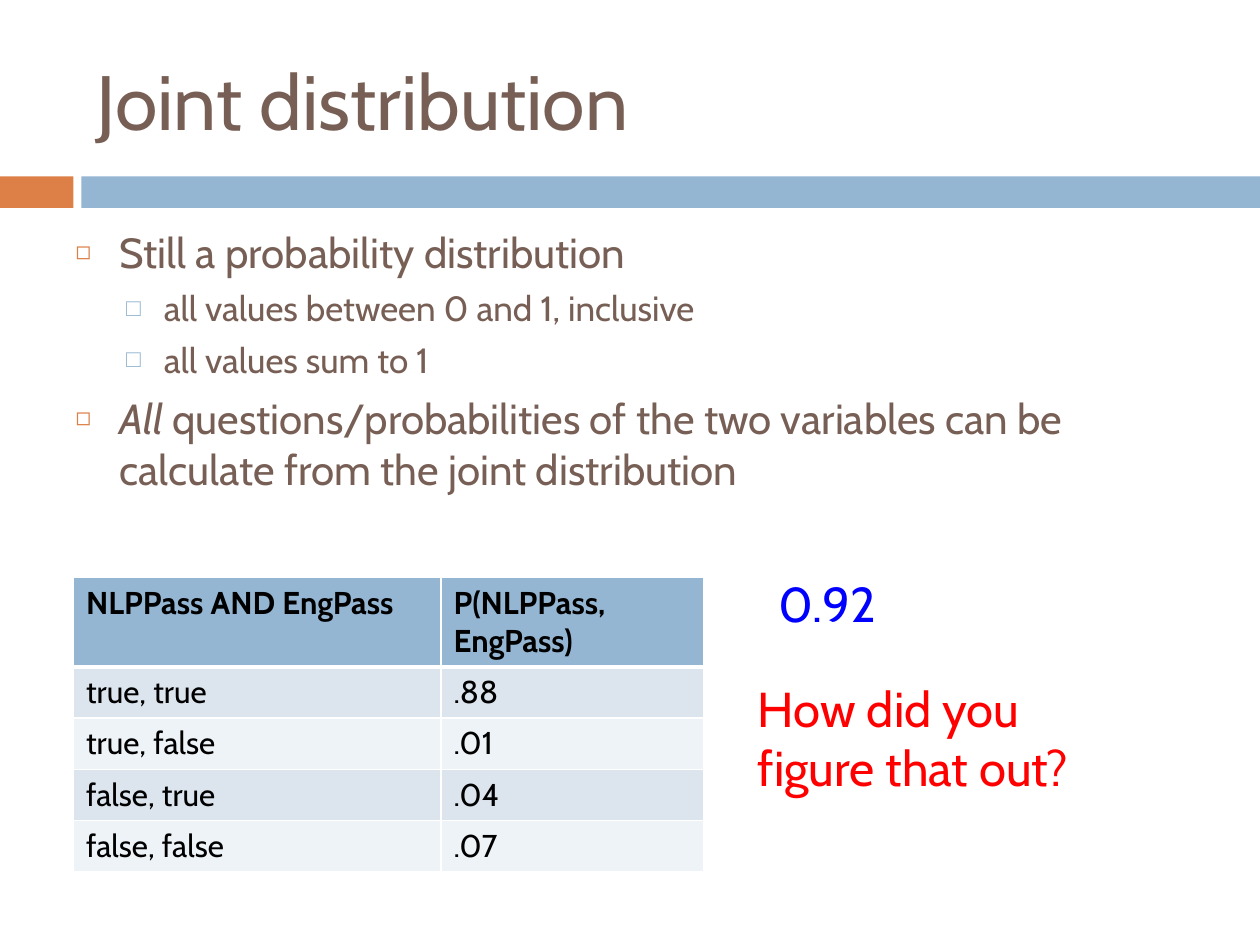
"""Build the joint distribution slide."""
from dataclasses import dataclass
from typing import Any, NamedTuple

import pptx
import pptx.dml.color
import pptx.enum.shapes
import pptx.enum.text
import pptx.oxml
import pptx.oxml.ns
import pptx.util

Pt = pptx.util.Pt


@dataclass(frozen=True)
class Theme:
    """Colours and type sizes of the slide."""
    font: str = "Cabin"
    brown: str = "775F55"
    orange: str = "DD8047"
    blue: str = "94B6D2"
    band_dark: str = "DCE5EE"
    band_light: str = "EEF3F7"
    white: str = "FFFFFF"
    black: str = "000000"
    answer: str = "0000FF"
    question: str = "FF0000"
    title_size: float = 44
    note_size: float = 28
    cell_size: float = 18


class Box(NamedTuple):
    """Left, top, width and height in points."""
    left: float
    top: float
    width: float
    height: float


class Bullet(NamedTuple):
    """Format of one list level."""
    char: str
    color: str
    percent: int
    margin: float
    indent: float
    before: float
    size: float


class Bar(NamedTuple):
    """A filled band under the title."""
    box: Box
    color: str


class Note(NamedTuple):
    """A free line of coloured text."""
    box: Box
    text: str
    color: str


THEME = Theme()
BULLETS = (
    Bullet("◻", THEME.orange, 60, 25.2, -25.2, 7, 24),
    Bullet("□", THEME.blue, 70, 50.4, -21.6, 5.5, 20),
)
BARS = (
    Bar(Box(0, 100.8, 42, 18), THEME.orange),
    Bar(Box(46.5, 100.8, 673.5, 18), THEME.blue),
)
ITEMS = (
    (0, (("Still a probability distribution", False),)),
    (1, (("all values between 0 and 1, inclusive", False),)),
    (1, (("all values sum to 1", False),)),
    (0, (("All", True),
         (" questions/probabilities of the two variables can be calculate "
          "from the joint distribution", False))),
)
ROWS = (
    ("NLPPass AND EngPass", "P(NLPPass, EngPass)"),
    ("true, true", ".88"),
    ("true, false", ".01"),
    ("false, true", ".04"),
    ("false, false", ".07"),
)
COLUMN_WIDTHS = (210, 150)
HEADER_HEIGHT, ROW_HEIGHT = 50.4, 29.2
NOTES = (
    Note(Box(426, 384, 228, 75), "How did you figure that out?", THEME.question),
    Note(Box(438, 324, 72, 41), "0.92", THEME.answer),
)


def rgb(color: str) -> pptx.dml.color.RGBColor:
    """Return a colour object for a hex string."""
    return pptx.dml.color.RGBColor.from_string(color)


def add_text(p: Any, text: str, *, size: float, color: str,
             bold: bool = False, italic: bool = False) -> None:
    """Add one formatted run to a paragraph."""
    r = p.add_run()
    r.text = text
    r.font.name, r.font.size = THEME.font, Pt(size)
    r.font.bold, r.font.italic = bold, italic
    r.font.color.rgb = rgb(color)


def place(sp: Any, box: Box) -> None:
    """Move and size a shape."""
    sp.left, sp.top, sp.width, sp.height = (Pt(v) for v in box)


def add_xml(parent: Any, xml: str) -> None:
    """Append a DrawingML element written without its namespace."""
    head, rest = xml.split(" ", 1)
    ns = pptx.oxml.ns.nsdecls("a")
    parent.append(pptx.oxml.parse_xml(f"{head} {ns} {rest}"))


def add_bar(s: Any, bar: Bar) -> None:
    """Draw a plain filled band."""
    sp = s.shapes.add_shape(pptx.enum.shapes.MSO_SHAPE.RECTANGLE,
                            *(Pt(v) for v in bar.box))
    sp.shadow.inherit = False
    sp.fill.solid()
    sp.fill.fore_color.rgb = rgb(bar.color)
    sp.line.fill.background()


def fill_title(sp: Any) -> None:
    """Write the title."""
    place(sp, Box(48, 18, 642, 78))
    tf = sp.text_frame
    tf.auto_size = pptx.enum.text.MSO_AUTO_SIZE.NONE
    tf.vertical_anchor = pptx.enum.text.MSO_ANCHOR.MIDDLE
    p = tf.paragraphs[0]
    p.alignment = pptx.enum.text.PP_ALIGN.LEFT
    add_text(p, "Joint distribution", size=THEME.title_size, color=THEME.brown)


def fill_body(sp: Any) -> None:
    """Write the bulleted list."""
    place(sp, Box(36, 126, 648, 168))
    tf = sp.text_frame
    tf.auto_size = pptx.enum.text.MSO_AUTO_SIZE.NONE
    for i, (level, runs) in enumerate(ITEMS):
        p = tf.add_paragraph() if i else tf.paragraphs[0]
        b = BULLETS[level]
        p.level, p.space_before = level, Pt(b.before)
        pPr = p._p.get_or_add_pPr()
        pPr.set("marL", str(Pt(b.margin)))
        pPr.set("indent", str(Pt(b.indent)))
        add_xml(pPr, f'<a:buClr ><a:srgbClr val="{b.color}"/></a:buClr>')
        add_xml(pPr, f'<a:buSzPct val="{b.percent * 1000}"/>')
        add_xml(pPr, f'<a:buChar char="{b.char}"/>')
        for text, italic in runs:
            add_text(p, text, size=b.size, color=THEME.brown, italic=italic)


def format_cell(cell: Any, text: str, row: int) -> None:
    """Write, border and fill one table cell."""
    header = row == 0
    widths = {"L": 1, "R": 1, "T": 3 if row == 1 else 1, "B": 3 if header else 1}
    for side, width in widths.items():
        add_xml(cell._tc.get_or_add_tcPr(),
                f'<a:ln{side} w="{Pt(width)}"><a:solidFill>'
                f'<a:srgbClr val="{THEME.white}"/></a:solidFill></a:ln{side}>')
    band = THEME.band_dark if row % 2 else THEME.band_light
    cell.fill.solid()
    cell.fill.fore_color.rgb = rgb(THEME.blue if header else band)
    add_text(cell.text_frame.paragraphs[0], text, size=THEME.cell_size,
             color=THEME.black, bold=header)


def add_table(s: Any) -> None:
    """Draw the probability table."""
    heights = [HEADER_HEIGHT] + [ROW_HEIGHT] * (len(ROWS) - 1)
    box = Box(42, 330, sum(COLUMN_WIDTHS), sum(heights))
    table = s.shapes.add_table(len(ROWS), len(COLUMN_WIDTHS),
                               *(Pt(v) for v in box)).table
    for column, width in zip(table.columns, COLUMN_WIDTHS):
        column.width = Pt(width)
    for i, (height, texts) in enumerate(zip(heights, ROWS)):
        table.rows[i].height = Pt(height)
        for j, text in enumerate(texts):
            format_cell(table.cell(i, j), text, i)


def add_note(s: Any, note: Note) -> None:
    """Draw a wrapped text box."""
    tf = s.shapes.add_textbox(*(Pt(v) for v in note.box)).text_frame
    tf.word_wrap = True
    tf.auto_size = pptx.enum.text.MSO_AUTO_SIZE.SHAPE_TO_FIT_TEXT
    add_text(tf.paragraphs[0], note.text, size=THEME.note_size, color=note.color)


def main() -> None:
    """Build and save the slide."""
    prs = pptx.Presentation()
    prs.slide_width, prs.slide_height = Pt(720), Pt(540)
    s = prs.slides.add_slide(prs.slide_layouts[1])
    for bar in BARS:
        add_bar(s, bar)
    fill_title(s.shapes.title)
    fill_body(s.placeholders[1])
    add_table(s)
    for note in NOTES:
        add_note(s, note)
    prs.save("out.pptx")


if __name__ == "__main__":
    main()
